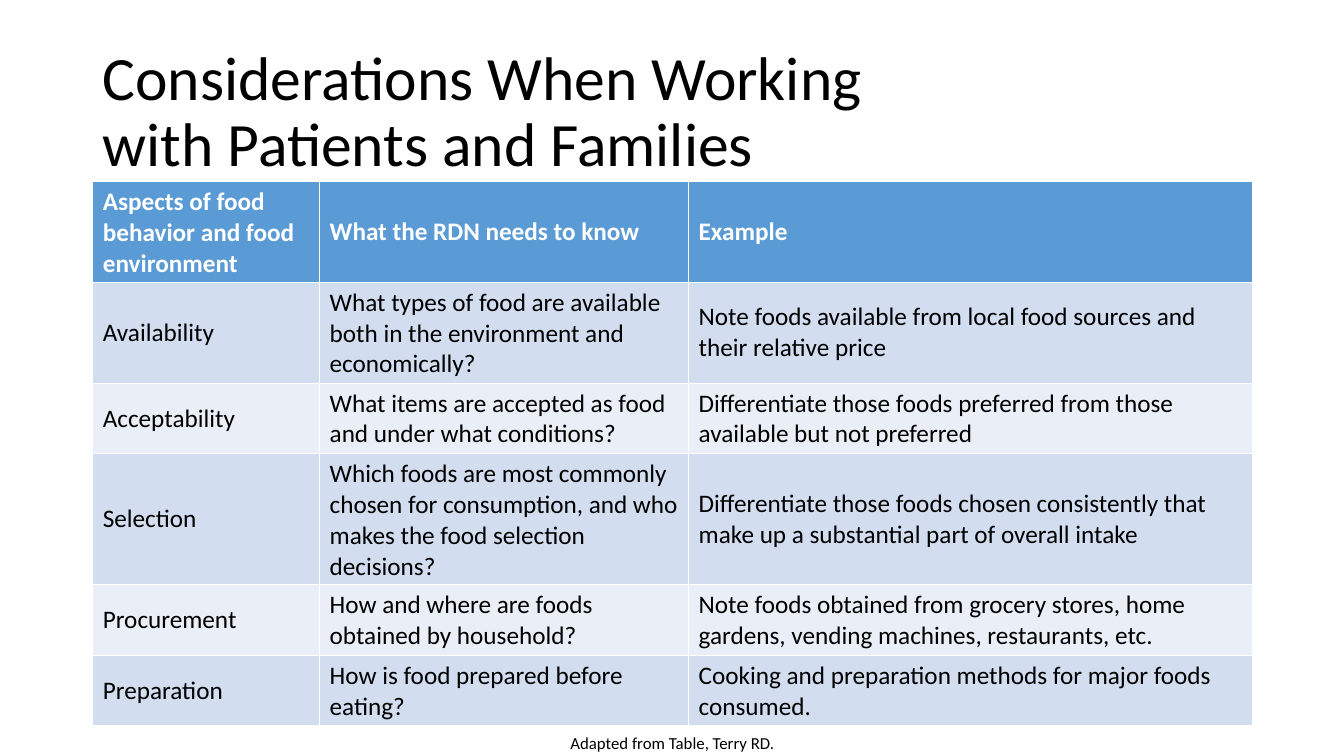
import pptx
import pptx.util
import pptx.dml.color
import pptx.enum.text
from pptx.util import Inches

theme = {
    "font": "Calibri",
    "text": "000000",
    "header_text": "FFFFFF",
    "header_fill": "5B9BD5",
    "row_fills": ["EAEFF7", "D2DEEF"],
    "title_size": 44,
    "table_size": 18,
    "credit_size": 12,
}


def color(name):
    return pptx.dml.color.RGBColor.from_string(name)


def style(paragraph, size, text_color, bold=False):
    font = paragraph.font
    font.name = theme["font"]
    font.size = pptx.util.Pt(size)
    font.color.rgb = color(text_color)
    font.bold = bold


presentation = pptx.Presentation()
presentation.slide_width = Inches(13.33)
presentation.slide_height = Inches(7.5)
slide = presentation.slides.add_slide(presentation.slide_layouts[6])
left, width = Inches(0.92), Inches(11.5)

title = slide.shapes.add_textbox(left, Inches(0.4), width, Inches(1.45)).text_frame
title.word_wrap = True
title.vertical_anchor = pptx.enum.text.MSO_ANCHOR.MIDDLE
heading = title.paragraphs[0]
heading.text = "Considerations When Working \vwith Patients and Families"
heading.line_spacing = 0.9
style(heading, theme["title_size"], theme["text"])

considerations = [
    ("Aspects of food behavior and food environment",
     "What the RDN needs to know",
     "Example"),
    ("Availability",
     "What types of food are available both in the environment and economically?",
     "Note foods available from local food sources and their relative price"),
    ("Acceptability",
     "What items are accepted as food and under what conditions?",
     "Differentiate those foods preferred from those available but not preferred"),
    ("Selection",
     "Which foods are most commonly chosen for consumption, and who makes the food selection decisions?",
     "Differentiate those foods chosen consistently that make up a substantial part of overall intake"),
    ("Procurement",
     "How and where are foods obtained by household?",
     "Note foods obtained from grocery stores, home gardens, vending machines, restaurants, etc."),
    ("Preparation",
     "How is food prepared before eating?",
     "Cooking and preparation methods for major foods consumed."),
]
column_widths = [2.25, 3.66, 5.59]
lines_per_row = [3, 3, 2, 4, 2, 2]

table = slide.shapes.add_table(
    len(considerations), len(column_widths), left, Inches(1.8), width, Inches(5.4)
).table
for column, column_width in zip(table.columns, column_widths):
    column.width = Inches(column_width)

for row_index, (aspects, lines) in enumerate(zip(considerations, lines_per_row)):
    is_header = row_index == 0
    table.rows[row_index].height = Inches(0.1 + 0.3 * lines)
    fill = theme["header_fill"] if is_header else theme["row_fills"][row_index % 2]
    text_color = theme["header_text"] if is_header else theme["text"]
    for column_index, wording in enumerate(aspects):
        cell = table.cell(row_index, column_index)
        cell.text = wording
        cell.vertical_anchor = pptx.enum.text.MSO_ANCHOR.MIDDLE
        cell.fill.solid()
        cell.fill.fore_color.rgb = color(fill)
        style(cell.text_frame.paragraphs[0], theme["table_size"], text_color, is_header)

credit = slide.shapes.add_textbox(left, Inches(7.22), width, Inches(0.3)).text_frame
credit.word_wrap = True
credit.auto_size = pptx.enum.text.MSO_AUTO_SIZE.SHAPE_TO_FIT_TEXT
adaptation = credit.paragraphs[0]
adaptation.text = "Adapted from Table, Terry RD."
adaptation.alignment = pptx.enum.text.PP_ALIGN.CENTER
style(adaptation, theme["credit_size"], theme["text"])

presentation.save("out.pptx")
